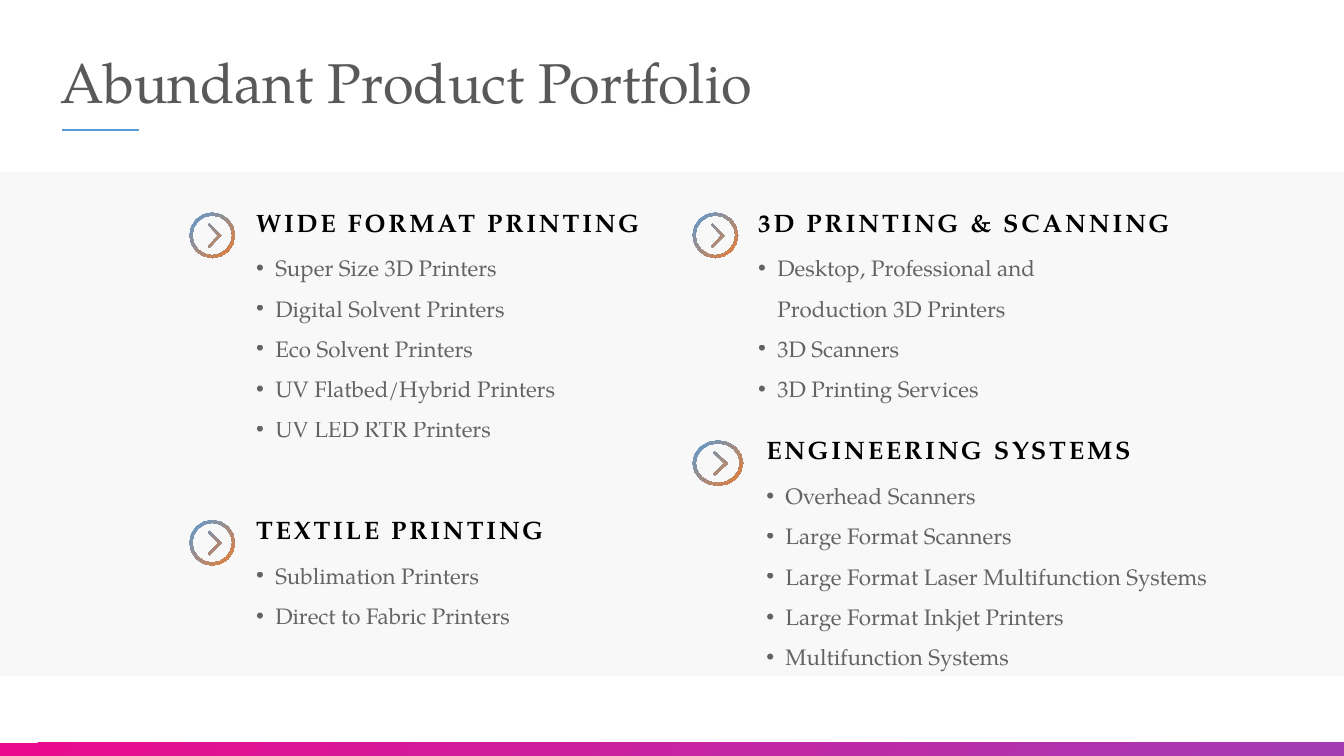
"""Build the product portfolio slide with four illustrated product groups."""
from dataclasses import dataclass
from math import cos, pi, sin

from lxml.etree import SubElement
from pptx import Presentation
from pptx.dml.color import RGBColor
from pptx.dml.fill import FillFormat
from pptx.enum.dml import MSO_PATTERN
from pptx.enum.shapes import MSO_CONNECTOR, MSO_SHAPE
from pptx.enum.text import MSO_ANCHOR, MSO_AUTO_SIZE, PP_ALIGN
from pptx.oxml.ns import qn
from pptx.slide import Slide
from pptx.text.text import TextFrame
from pptx.util import Inches, Pt

FONT = "TeX Gyre Pagella"
COLORS = {
    "title": "595959", "text": "000000", "band": "F8F8F8", "white": "FFFFFF",
    "blue": "5B9BD5", "orange": "ED7D31", "pink": "EB0A8D", "purple": "A33CB4",
}
ICON_UNITS = 1000
ICON_HEIGHT = 0.45
LIST_OFFSET = 0.28
LIST_INDENT = 0.19
CHEVRON = [(435, 240), (700, 505), (435, 775), (410, 740), (630, 505), (410, 270)]


@dataclass
class ProductGroup:
    """A heading with its icon and product list."""
    heading: str
    products: list[str]
    icon_left: float
    text_left: float
    top: float
    heading_width: float
    list_width: float
    list_height: float
    icon_width: float = ICON_HEIGHT


GROUPS = [
    ProductGroup("WIDE FORMAT PRINTING",
                 ["Super Size 3D Printers", "Digital Solvent Printers", "Eco Solvent Printers",
                  "UV Flatbed/Hybrid Printers", "UV LED RTR Printers"],
                 1.88, 2.54, 2.11, 3.95, 3.74, 2.02),
    ProductGroup("3D PRINTING & SCANNING",
                 ["Desktop, Professional and Production 3D Printers", "3D Scanners",
                  "3D Printing Services"],
                 6.87, 7.52, 2.11, 4.21, 3.74, 1.62),
    ProductGroup("ENGINEERING SYSTEMS",
                 ["Overhead Scanners", "Large Format Scanners",
                  "Large Format Laser Multifunction Systems", "Large Format Inkjet Printers",
                  "Multifunction Systems"],
                 6.87, 7.6, 4.37, 4.69, 4.69, 2.02, 0.5),
    ProductGroup("TEXTILE PRINTING", ["Sublimation Printers", "Direct to Fabric Printers"],
                 1.88, 2.54, 5.16, 3.95, 3.74, 0.81),
]


def color(name: str) -> RGBColor:
    """Return a named colour."""
    return RGBColor.from_string(COLORS[name])


def place(shape, left: float, top: float, width: float, height: float) -> None:
    """Move and size a shape in inches."""
    shape.left, shape.top = Inches(left), Inches(top)
    shape.width, shape.height = Inches(width), Inches(height)


def fill_gradient(fill: FillFormat, start: str, end: str) -> None:
    """Fill diagonally from the top left to the bottom right."""
    fill.gradient()
    fill.gradient_angle = 315
    for stop, name, position in zip(fill.gradient_stops, (start, end), (0, 1)):
        stop.color.rgb = color(name)
        stop.position = position


def set_frame(frame: TextFrame, right: float = 0) -> None:
    """Give a text frame wrapping, top anchoring and tight margins."""
    frame.word_wrap = True
    frame.auto_size = MSO_AUTO_SIZE.NONE
    frame.vertical_anchor = MSO_ANCHOR.TOP
    frame.margin_left = frame.margin_top = frame.margin_bottom = 0
    frame.margin_right = Inches(right)


def write_text(frame: TextFrame, lines: list[str], *, size: float, color_name: str,
               line_spacing: float, bold: bool = False, tracking: float = 0,
               opacity: float = 1, bullet: str = "") -> None:
    """Write one formatted paragraph for each line."""
    frame.text = "\n".join(lines)
    for paragraph in frame.paragraphs:
        if bullet:
            properties = paragraph._p.get_or_add_pPr()
            properties.set("marL", str(Inches(LIST_INDENT)))
            properties.set("indent", str(-Inches(LIST_INDENT)))
            SubElement(properties, qn("a:buFont"), typeface="Arial")
            SubElement(properties, qn("a:buChar"), char=bullet)
        paragraph.alignment = PP_ALIGN.LEFT
        paragraph.line_spacing = line_spacing
        paragraph.space_before = paragraph.space_after = Pt(0)
        for run in paragraph.runs:
            font = run.font
            font.name, font.size, font.bold = FONT, Pt(size), bold
            font.color.rgb = color(color_name)
            run_properties = run._r.get_or_add_rPr()
            if tracking:
                run_properties.set("spc", str(int(tracking * 100)))
            if opacity < 1:
                SubElement(run_properties.find(".//" + qn("a:srgbClr")), qn("a:alpha"),
                           val=str(int(opacity * 100000)))


def circle(radius: float) -> list[tuple[float, float]]:
    """Return the points of a circle centred in the icon."""
    center, steps = ICON_UNITS / 2, 16
    return [(center + radius * cos(2 * pi * step / steps),
             center + radius * sin(2 * pi * step / steps)) for step in range(steps)]


def add_icon(slide: Slide, group: ProductGroup) -> None:
    """Draw a ring around a chevron as one outline."""
    scale = (Inches(group.icon_width) / ICON_UNITS, Inches(ICON_HEIGHT) / ICON_UNITS)
    outer, *others = circle(500), circle(440), CHEVRON
    builder = slide.shapes.build_freeform(*outer[0], scale=scale)
    builder.add_line_segments(outer[1:])
    for contour in others:
        builder.move_to(*contour[0])
        builder.add_line_segments(contour[1:])
    icon = builder.convert_to_shape(Inches(group.icon_left), Inches(group.top))
    icon.shadow.inherit = False
    fill_gradient(icon.fill, "blue", "orange")
    icon.line.fill.background()


def add_group(slide: Slide, group: ProductGroup, body) -> None:
    """Add the heading, list and icon of a product group."""
    heading = slide.shapes.add_textbox(0, 0, 0, 0)
    place(heading, group.text_left, group.top, group.heading_width, 0.25)
    set_frame(heading.text_frame)
    write_text(heading.text_frame, [group.heading], size=18, color_name="text",
               line_spacing=0.8, bold=True, tracking=2)
    place(body, group.text_left, group.top + LIST_OFFSET, group.list_width, group.list_height)
    set_frame(body.text_frame, right=0.1)
    write_text(body.text_frame, group.products, size=16, color_name="text",
               line_spacing=1.5, opacity=0.6, bullet="•")
    add_icon(slide, group)


def add_rectangle(slide: Slide, left: float, top: float, width: float, height: float):
    """Add a borderless rectangle behind the text."""
    shape = slide.shapes.add_shape(MSO_SHAPE.RECTANGLE, 0, 0, 0, 0)
    place(shape, left, top, width, height)
    shape.shadow.inherit = False
    shape.line.fill.background()
    slide.shapes._spTree.insert(2, shape._element)
    return shape


def add_underline(slide: Slide) -> None:
    """Draw the short rule under the title."""
    line = slide.shapes.add_connector(MSO_CONNECTOR.STRAIGHT, Inches(0.62), Inches(1.29),
                                      Inches(1.38), Inches(1.29))
    line.line.color.rgb = color("blue")
    line.line.width = Pt(2)
    SubElement(line._element.spPr, qn("a:effectLst"))


def main() -> None:
    """Create and save the slide."""
    presentation = Presentation()
    presentation.slide_width, presentation.slide_height = Inches(13.33), Inches(7.5)
    slide = presentation.slides.add_slide(presentation.slide_layouts.get_by_name("Comparison"))
    band = add_rectangle(slide, 0, 1.7, 13.33, 5)
    band.fill.patterned()
    band.fill.pattern = MSO_PATTERN.DARK_HORIZONTAL
    band.fill.fore_color.rgb = color("band")
    band.fill.back_color.rgb = color("white")
    fill_gradient(add_rectangle(slide, 0, 7.37, 13.33, 0.13).fill, "pink", "purple")
    title, *bodies = slide.placeholders
    place(title, 0.5, 0.5, 7.43, 0.81)
    title.text_frame.auto_size = MSO_AUTO_SIZE.NONE
    title.text_frame.vertical_anchor = MSO_ANCHOR.MIDDLE
    title.text_frame.margin_top = 0
    title.text_frame.margin_bottom = Inches(0.12)
    write_text(title.text_frame, ["Abundant Product Portfolio"], size=40, color_name="title",
               line_spacing=0.9)
    for group, body in zip(GROUPS, bodies):
        add_group(slide, group, body)
    add_underline(slide)
    presentation.save("out.pptx")


if __name__ == "__main__":
    main()
